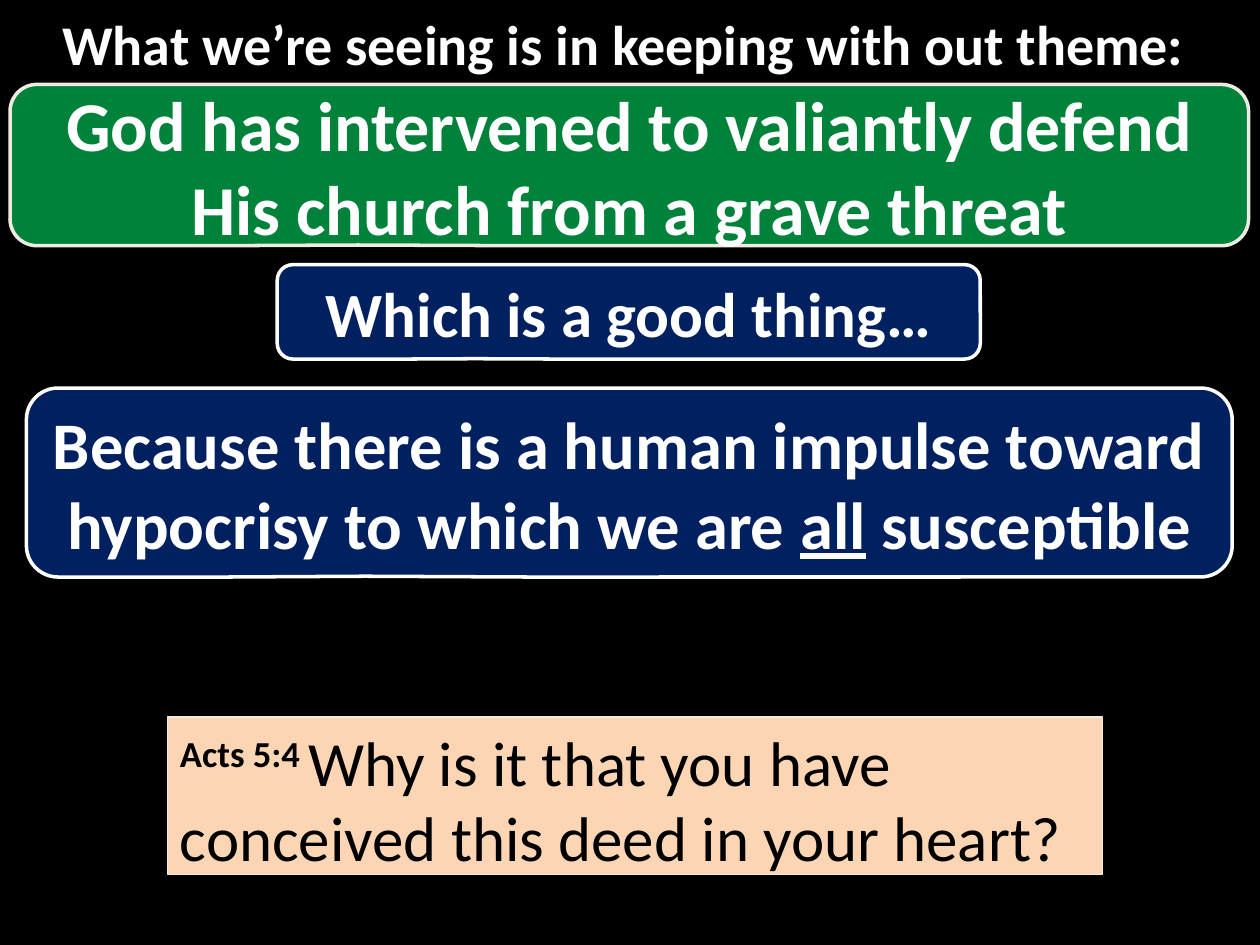
from pptx import Presentation
from pptx.dml.color import RGBColor
from pptx.enum import shapes, text
from pptx.util import Inches, Pt

BLACK = RGBColor(0x00, 0x00, 0x00)
WHITE = RGBColor(0xFF, 0xFF, 0xFF)
CREAM = RGBColor(0xEE, 0xEC, 0xE1)
GREEN = RGBColor(0x00, 0x82, 0x3B)
NAVY = RGBColor(0x00, 0x20, 0x60)
PEACH = RGBColor(0xFC, 0xD5, 0xB5)
CALLOUT_SHAPE = (-0.219, 0.496, 0.167)


def add_box(page, kind, box, fill, line, line_width):
    shape = page.shapes.add_shape(kind, *(Inches(length) for length in box))
    shape.shadow.inherit = False
    if fill is None:
        shape.fill.background()
    else:
        shape.fill.solid()
        shape.fill.fore_color.rgb = fill
    if line is None:
        shape.line.fill.background()
    else:
        shape.line.color.rgb = line
        shape.line.width = Pt(line_width)
    shape.text_frame.word_wrap = True
    return shape


def add_span(para, words, size, color, bold=True):
    span = para.add_run()
    span.text = words
    span.font.name = "Calibri"
    span.font.size = Pt(size)
    span.font.bold = bold
    span.font.color.rgb = color
    return span


def add_callout(page, box, words, size, fill=None, line=None, underlined=None):
    """Place a centred statement, underlining one of its words if given."""
    shape = add_box(page, shapes.MSO_SHAPE.ROUNDED_RECTANGULAR_CALLOUT,
                    box, fill, line, 2)
    for index, value in enumerate(CALLOUT_SHAPE):
        shape.adjustments[index] = value
    shape.text_frame.vertical_anchor = text.MSO_ANCHOR.MIDDLE
    para = shape.text_frame.paragraphs[0]
    para.alignment = text.PP_ALIGN.CENTER
    before, match, after = words.partition(underlined) if underlined else (words, "", "")
    add_span(para, before, size, WHITE)
    if match:
        add_span(para, match, size, WHITE).font.underline = True
        add_span(para, after, size, WHITE)


def add_verse(page, box, reference, words):
    shape = add_box(page, shapes.MSO_SHAPE.RECTANGLE, box, PEACH, CREAM, 0.75)
    shape.text_frame.vertical_anchor = text.MSO_ANCHOR.TOP
    para = shape.text_frame.paragraphs[0]
    para.alignment = text.PP_ALIGN.LEFT
    superscript = add_span(para, reference, 36, BLACK)
    superscript.font._element.set("baseline", "30000")
    add_span(para, words, 36, BLACK, bold=False)


def build_theme_slide(deck):
    page = deck.slides.add_slide(deck.slide_layouts[6])
    page.background.fill.solid()
    page.background.fill.fore_color.rgb = BLACK
    add_callout(page, (0.08, 0.67, 9.83, 1.28),
                "God has intervened to valiantly defend His church from a grave threat",
                40, GREEN, CREAM)
    add_callout(page, (0, 0.08, 10, 0.53),
                "What we’re seeing is in keeping with out theme: ", 32)
    add_callout(page, (0.21, 3.08, 9.57, 1.5),
                "Because there is a human impulse toward hypocrisy "
                "to which we are all susceptible",
                38, NAVY, WHITE, underlined="all")
    add_verse(page, (1.33, 5.69, 7.42, 1.25), "Acts 5:4 ",
              "Why is it that you have conceived this deed in your heart?")
    add_callout(page, (2.2, 2.1, 5.58, 0.75), "Which is a good thing…",
                36, NAVY, WHITE)


def main():
    deck = Presentation()
    deck.slide_width = Inches(10)
    deck.slide_height = Inches(7.5)
    build_theme_slide(deck)
    deck.save("out.pptx")


if __name__ == "__main__":
    main()
